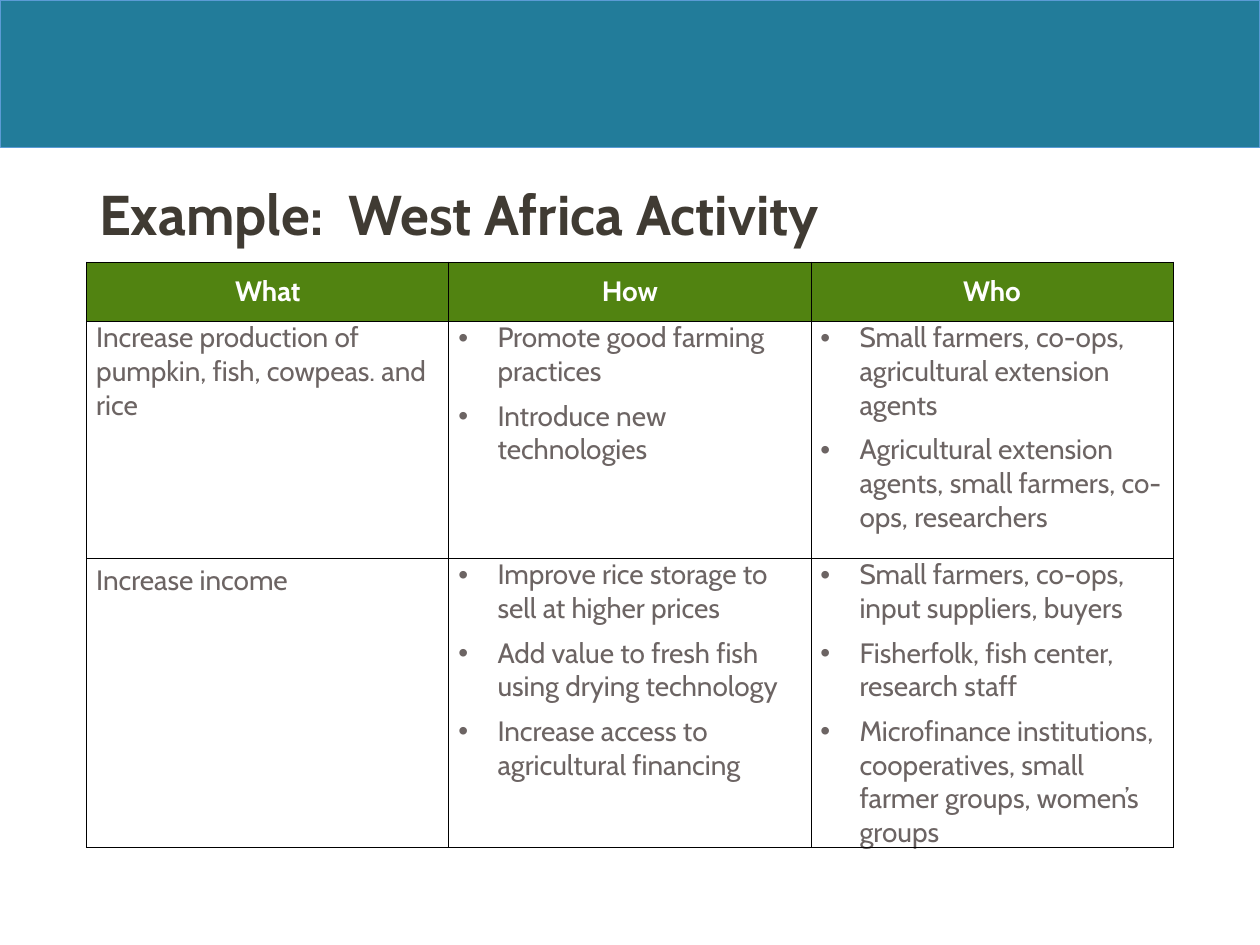
from dataclasses import dataclass

import lxml.etree
import pptx
import pptx.dml.color
import pptx.enum.shapes
import pptx.enum.text
import pptx.oxml.ns
import pptx.util

Cm = pptx.util.Cm
Pt = pptx.util.Pt
Anchor = pptx.enum.text.MSO_ANCHOR
Align = pptx.enum.text.PP_ALIGN


@dataclass(frozen=True)
class Theme:
    font: str = "Cabin"
    band: str = "227C9A"
    band_line: str = "5B9BD5"
    title: str = "403B33"
    header: str = "518311"
    header_text: str = "FFFFFF"
    body: str = "6C6463"
    border: str = "000000"
    title_size: int = 32
    table_size: int = 16
    line_width: float = 0.5


HEADERS = ["What", "How", "Who"]
ACTIVITIES = [
    [
        "Increase production of pumpkin, fish, cowpeas. and rice",
        ["Promote good farming practices", "Introduce new technologies"],
        [
            "Small farmers, co-ops, agricultural extension agents",
            "Agricultural extension agents, small farmers, co-ops, researchers",
        ],
    ],
    [
        "Increase income",
        [
            "Improve rice storage to sell at higher prices",
            "Add value to fresh fish using drying technology",
            "Increase access to agricultural financing",
        ],
        [
            "Small farmers, co-ops, input suppliers, buyers",
            "Fisherfolk, fish center, research staff",
            "Microfinance institutions, cooperatives, small farmer groups, women’s groups",
        ],
    ],
]


def rgb(value):
    return pptx.dml.color.RGBColor.from_string(value)


def add_element(parent, tag, **attributes):
    return lxml.etree.SubElement(parent, pptx.oxml.ns.qn(tag), **attributes)


class SlideBuilder:
    def __init__(self, slide, theme):
        self.slide = slide
        self.theme = theme

    def format_text(self, para, size, color, bold=False):
        for span in para.runs:
            span.font.name = self.theme.font
            span.font.size = Pt(size)
            span.font.bold = bold
            span.font.color.rgb = rgb(color)

    def add_band(self, width, height):
        band = self.slide.shapes.add_shape(
            pptx.enum.shapes.MSO_SHAPE.RECTANGLE, 0, 0, width, height
        )
        band.shadow.inherit = False
        band.fill.solid()
        band.fill.fore_color.rgb = rgb(self.theme.band)
        band.line.color.rgb = rgb(self.theme.band_line)
        band.line.width = Pt(self.theme.line_width)

    def add_title(self, text, left, top, width, height):
        box = self.slide.shapes.add_textbox(left, top, width, height)
        frame = box.text_frame
        frame.word_wrap = True
        frame.vertical_anchor = Anchor.MIDDLE
        frame.text = text
        para = frame.paragraphs[0]
        para.line_spacing = 0.9
        self.format_text(para, self.theme.title_size, self.theme.title, True)

    def add_borders(self, cell):
        properties = cell._tc.get_or_add_tcPr()
        for position, side in enumerate(("a:lnL", "a:lnR", "a:lnT", "a:lnB")):
            line = add_element(properties, side, w=str(Pt(self.theme.line_width)))
            fill = add_element(line, "a:solidFill")
            add_element(fill, "a:srgbClr", val=self.theme.border)
            properties.insert(position, line)

    def fill_cell(self, cell, content, margin):
        cell.margin_left = cell.margin_right = Cm(0.19)
        cell.margin_top = cell.margin_bottom = margin
        cell.text_frame.text = content if isinstance(content, str) else "\n".join(content)
        self.add_borders(cell)

    def add_header_cell(self, cell, text):
        self.fill_cell(cell, text, Cm(0.13))
        cell.vertical_anchor = Anchor.MIDDLE
        cell.fill.solid()
        cell.fill.fore_color.rgb = rgb(self.theme.header)
        para = cell.text_frame.paragraphs[0]
        para.alignment = Align.CENTER
        self.format_text(para, self.theme.table_size, self.theme.header_text, True)

    def add_body_cell(self, cell, content):
        self.fill_cell(cell, content, 0)
        cell.fill.background()
        for para in cell.text_frame.paragraphs:
            if isinstance(content, list):
                self.add_bullet(para)
            self.format_text(para, self.theme.table_size, self.theme.body)

    def add_bullet(self, para):
        para.space_after = Pt(6)
        properties = para._p.get_or_add_pPr()
        indent = Cm(0.79)
        properties.set("marL", str(indent))
        properties.set("indent", str(-indent))
        add_element(properties, "a:buFont", typeface="Arial")
        add_element(properties, "a:buChar", char="•")

    def add_table(self, headers, rows, left, top, width, heights):
        frame = self.slide.shapes.add_table(
            len(heights), len(headers), left, top, width, sum(heights)
        )
        table = frame.table
        for column in table.columns:
            column.width = width // len(headers)
        for row, height in zip(table.rows, heights):
            row.height = height
        for column, text in enumerate(headers):
            self.add_header_cell(table.cell(0, column), text)
        for row, contents in enumerate(rows, 1):
            for column, content in enumerate(contents):
                self.add_body_cell(table.cell(row, column), content)
        return table


def main():
    deck = pptx.Presentation()
    deck.slide_width = Cm(25.4)
    deck.slide_height = Cm(19.05)
    builder = SlideBuilder(deck.slides.add_slide(deck.slide_layouts[6]), Theme())

    left, width = Cm(1.75), Cm(21.9)
    builder.add_band(deck.slide_width, Cm(2.97))
    builder.add_title("Example:  West Africa Activity", left, Cm(3.48), width, Cm(1.8))
    table = builder.add_table(
        HEADERS, ACTIVITIES, left, Cm(5.28), width, [Cm(1.19), Cm(4.78), Cm(5.3)]
    )
    income = table.cell(2, 0).text_frame.paragraphs[0]
    income.line_spacing = 1.15
    income.space_after = Pt(6)

    deck.save("out.pptx")


if __name__ == "__main__":
    main()
